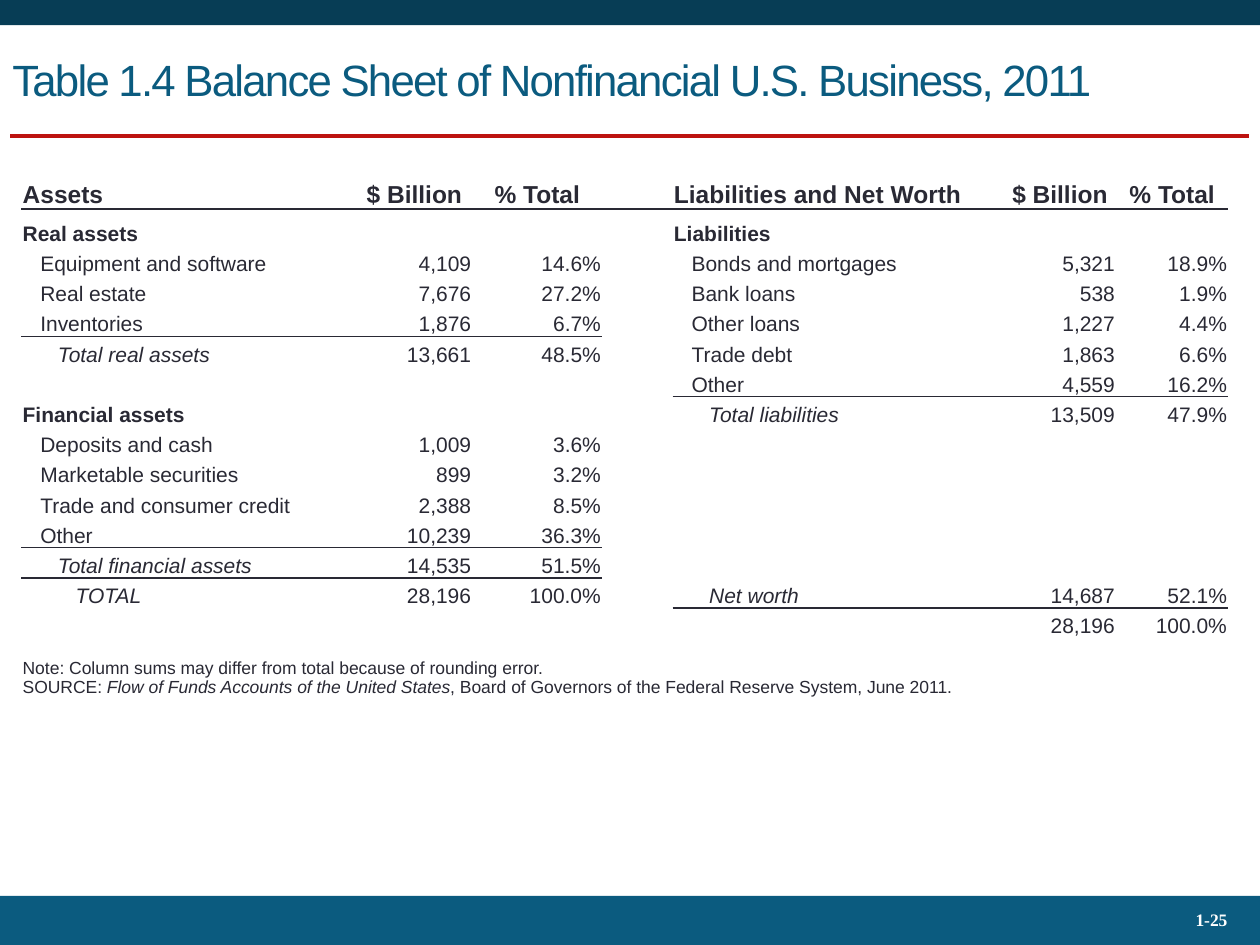
from lxml import etree
from pptx import Presentation
from pptx import util as u
from pptx.dml.color import RGBColor
from pptx.enum import shapes, text
from pptx.oxml.ns import qn

NAVY, TEAL, RED, INK, WHITE = "073D55", "0B5B7F", "BD130F", "292934", "FFFFFF"
PLAIN_STYLE = "{2D5ABB26-0587-4C30-8999-92F81FD0307C}"
LEFT, RIGHT, CENTER = text.PP_ALIGN.LEFT, text.PP_ALIGN.RIGHT, text.PP_ALIGN.CENTER
WIDTHS = [1.52, 1.14, 0.92, 1.03, 0.56, 1.22, 0.89, 0.3, 0.22, 0.89, 0.89]
HEIGHTS = [0.33, 0.29] + [0.24] * 13 + [0.47]
INDENT = 0.14

ASSETS = [
    (1, "Real assets", 0, "", ""),
    (2, "Equipment and software", 1, "4,109", "14.6%"),
    (3, "Real estate", 1, "7,676", "27.2%"),
    (4, "Inventories", 1, "1,876", "6.7%"),
    (5, "Total real assets", 2, "13,661", "48.5%"),
    (7, "Financial assets", 0, "", ""),
    (8, "Deposits and cash", 1, "1,009", "3.6%"),
    (9, "Marketable securities", 1, "899", "3.2%"),
    (10, "Trade and consumer credit", 1, "2,388", "8.5%"),
    (11, "Other", 1, "10,239", "36.3%"),
    (12, "Total financial assets", 2, "14,535", "51.5%"),
    (13, "TOTAL", 3, "28,196", "100.0%"),
]
LIABILITIES = [
    (1, "Liabilities", 0, "", ""),
    (2, "Bonds and mortgages", 1, "5,321", "18.9%"),
    (3, "Bank loans", 1, "538", "1.9%"),
    (4, "Other loans", 1, "1,227", "4.4%"),
    (5, "Trade debt", 1, "1,863", "6.6%"),
    (6, "Other", 1, "4,559", "16.2%"),
    (7, "Total liabilities", 2, "13,509", "47.9%"),
    (13, "Net worth", 2, "14,687", "52.1%"),
    (14, "", 0, "28,196", "100.0%"),
]
MERGES = {
    (0, 1): (2, 5, 8, 9, 10, 12),
    (5, 7): (0,),
    (6, 7): (1,),
    (5, 8): (2,),
    (5, 6): (3, 4, 5, 7, 13),
    (7, 8): range(3, 15),
    (0, 10): (15,),
}
NOTES = [
    [("Note: Column sums may differ from total because of rounding error.", False)],
    [("SOURCE: ", False), ("Flow of Funds Accounts of the United States", True),
     (", Board of Governors of the Federal Reserve System, June 2011.", False)],
]


def color(value):
    """Turn a hex string into a colour."""
    return RGBColor.from_string(value)


def add_span(para, words, size, shade=INK, bold=False, italic=False, face="Arial"):
    """Append one formatted run to a paragraph."""
    span = para.add_run()
    span.text = words
    font = span.font
    font.size, font.name, font.bold, font.italic = u.Pt(size), face, bold, italic
    font.color.rgb = color(shade)
    return span


def add_band(page, left, top, width, height, shade):
    """Draw a plain filled band."""
    band = page.shapes.add_shape(
        shapes.MSO_SHAPE.RECTANGLE, *map(u.Inches, (left, top, width, height)))
    band.shadow.inherit = False
    band.fill.solid()
    band.fill.fore_color.rgb = color(shade)
    band.line.fill.background()


def add_text_box(page, left, top, width, height):
    """Add a wrapped, vertically centred box and return its first paragraph."""
    box = page.shapes.add_textbox(*map(u.Inches, (left, top, width, height)))
    box.text_frame.word_wrap = True
    box.text_frame.vertical_anchor = text.MSO_ANCHOR.MIDDLE
    return box.text_frame.paragraphs[0]


def add_header(page, left, top, width, height):
    """Place the top band, the title and the red rule."""
    add_band(page, left, top, width, 0.2, NAVY)
    para = add_text_box(page, left, top + 0.17, width, height - 0.17)
    title = add_span(para, "Table 1.4 Balance Sheet of Nonfinancial U.S. Business, 2011",
                     25, TEAL)
    title.font._element.set("spc", "-100")
    base = u.Inches(top + height)
    rule = page.shapes.add_connector(
        shapes.MSO_CONNECTOR.STRAIGHT, u.Inches(left + 0.08), base,
        u.Inches(left + width - 0.09), base)
    rule.line.color.rgb = color(RED)
    rule.line.width = u.Pt(2.25)
    etree.SubElement(rule._element.spPr, qn("a:effectLst"))


def add_footer(page, left, top, width, height):
    """Place the bottom band and the page number."""
    add_band(page, left, top, width, height, TEAL)
    para = add_text_box(page, left + width - 1.33, top + 0.02, 1.17, height - 0.04)
    para.alignment, para.line_spacing = RIGHT, 0.93
    add_span(para, "1-25", 10, WHITE, bold=True, face="Times New Roman")


def prepare_cell(cell):
    """Clear a cell and set its tight margins and small empty-line size."""
    cell.margin_left = cell.margin_right = cell.margin_top = u.Inches(0.01)
    cell.margin_bottom = 0
    cell.vertical_anchor = text.MSO_ANCHOR.BOTTOM
    cell.fill.background()
    props = cell._tc.get_or_add_tcPr()
    for side in ("lnL", "lnR", "lnT", "lnB"):
        line = etree.Element(qn("a:" + side))
        etree.SubElement(line, qn("a:noFill"))
        props[-1].addprevious(line)
    ending = etree.SubElement(cell.text_frame.paragraphs[0]._p, qn("a:endParaRPr"))
    ending.set("sz", "1200")


def write_cell(cell, words, align=LEFT, level=0, **style):
    """Write one aligned and indented entry into a cell."""
    if words:
        para = cell.text_frame.paragraphs[0]
        para.alignment = align
        if level:
            para._p.get_or_add_pPr().set("marL", str(u.Inches(level * INDENT)))
        add_span(para, words, **style)


def show_border(cell, side):
    """Turn one hidden side of a cell into a thin line."""
    line = cell._tc.get_or_add_tcPr().find(qn("a:" + side))
    line.set("w", str(u.Pt(1)))
    line.remove(line[0])
    fill = etree.SubElement(line, qn("a:solidFill"))
    etree.SubElement(fill, qn("a:srgbClr"), val=INK)


def rule_below(table, row, columns):
    """Rule a line between a row and the next one."""
    for column in columns:
        show_border(table.cell(row, column), "lnB")
        show_border(table.cell(row + 1, column), "lnT")


def fill_side(table, heading, entries, label, amount, ruled_rows):
    """Fill one side of the balance sheet, from its label column on."""
    percent = amount + 1
    heads = ((label, heading, LEFT), (amount, "$ Billion", CENTER),
             (percent, "% Total", CENTER))
    for column, words, align in heads:
        write_cell(table.cell(0, column), words, align, size=14, bold=True)
    for row, name, level, billions, share in entries:
        write_cell(table.cell(row, label), name, level=level, size=12,
                   bold=level == 0, italic=level > 1)
        for column, value in ((amount, billions), (percent, share)):
            write_cell(table.cell(row, column), value, RIGHT, size=12)
    for row in ruled_rows:
        rule_below(table, row, range(label, percent + 1))


def add_balance_sheet(page, left, top, width, height):
    """Build the two-sided balance sheet with its notes."""
    frame = page.shapes.add_table(
        len(HEIGHTS), len(WIDTHS), *map(u.Inches, (left, top, width, height)))
    table = frame.table
    table.first_row = table.horz_banding = False
    table._tbl.tblPr.find(qn("a:tableStyleId")).text = PLAIN_STYLE
    for column, size in zip(table.columns, WIDTHS):
        column.width = u.Inches(size)
    for row, size in zip(table.rows, HEIGHTS):
        row.height = u.Inches(size)
    for cell in table.iter_cells():
        prepare_cell(cell)
    for (first, last), rows in MERGES.items():
        for row in rows:
            table.cell(row, first).merge(table.cell(row, last))
    rule_below(table, 0, range(len(WIDTHS)))
    fill_side(table, "Assets", ASSETS, 0, 2, (4, 11, 12))
    fill_side(table, "Liabilities and Net Worth", LIABILITIES, 5, 9, (6, 13))
    notes = table.cell(len(HEIGHTS) - 1, 0).text_frame
    for para, spans in zip((notes.paragraphs[0], notes.add_paragraph()), NOTES):
        for words, italic in spans:
            add_span(para, words, 10, italic=italic)


def main():
    """Build and save the slide."""
    deck = Presentation()
    deck.slide_width, deck.slide_height = u.Inches(10), u.Inches(7.5)
    page = deck.slides.add_slide(deck.slide_layouts[6])
    add_header(page, 0, 0, 10, 1.08)
    add_footer(page, 0, 7.11, 10, 0.39)
    add_balance_sheet(page, 0.17, 1.33, sum(WIDTHS), sum(HEIGHTS))
    deck.save("out.pptx")


if __name__ == "__main__":
    main()
